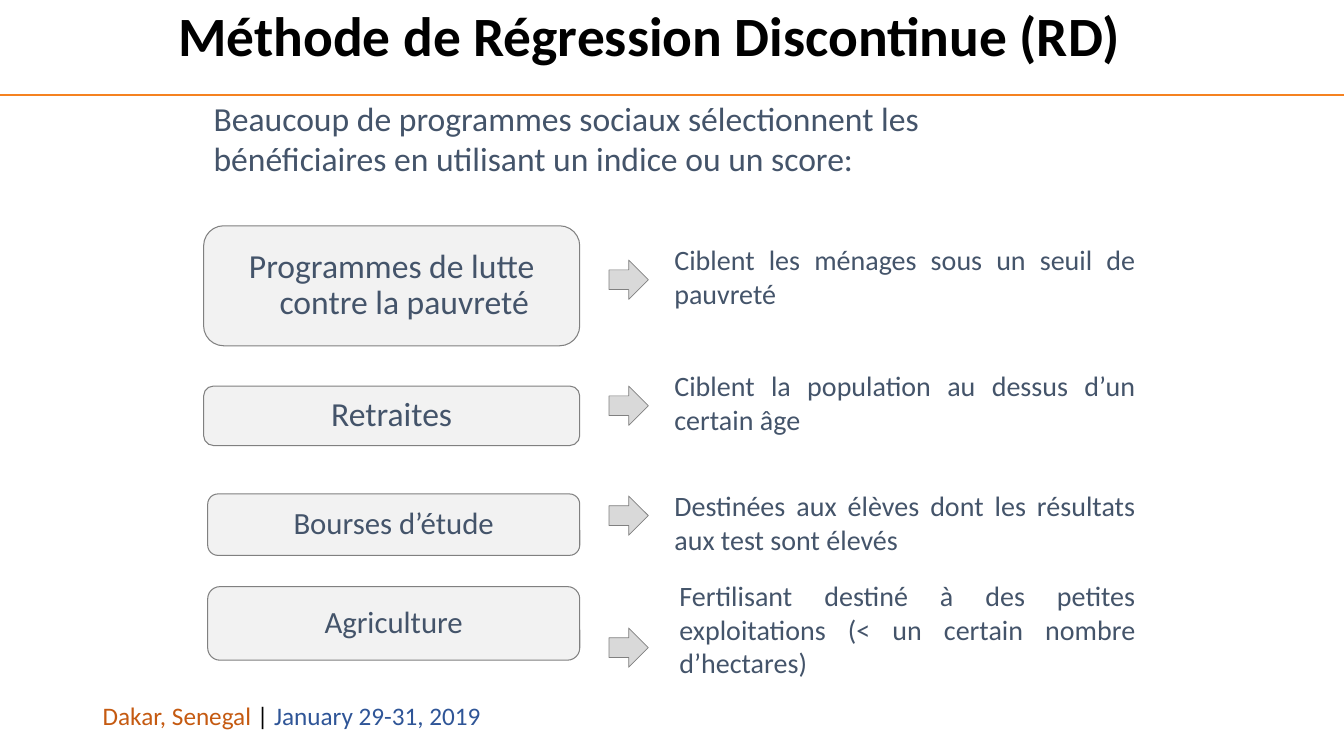
"""Build the slide on the regression discontinuity method."""
from dataclasses import dataclass

from lxml import etree
from pptx import Presentation
from pptx.dml.color import RGBColor
from pptx.enum.shapes import MSO_CONNECTOR, MSO_SHAPE
from pptx.enum.text import MSO_ANCHOR, MSO_AUTO_SIZE, PP_ALIGN
from pptx.oxml.ns import qn
from pptx.util import Inches, Pt

ROUNDED, ARROW = MSO_SHAPE.ROUNDED_RECTANGLE, MSO_SHAPE.RIGHT_ARROW
STRAIGHT = MSO_CONNECTOR.STRAIGHT
LEFT, CENTER, JUSTIFY = PP_ALIGN.LEFT, PP_ALIGN.CENTER, PP_ALIGN.JUSTIFY
TOP, MIDDLE = MSO_ANCHOR.TOP, MSO_ANCHOR.MIDDLE
NO_AUTOFIT = MSO_AUTO_SIZE.NONE

FONT = "Calibri"
SLATE, BLACK, GREY = "44546A", "000000", "808080"
PROGRAM_RIGHT, CRITERION_RIGHT = 5.75, 11.36
ARROW_LEFT, ARROW_SIZE = 6.04, 0.39


@dataclass
class Program:
    """A social programme and the criterion that selects its beneficiaries."""
    name: str
    size: int
    left: float
    top: float
    height: float
    arrow_top: float
    criterion: str
    criterion_left: float
    criterion_top: float
    criterion_height: float


PROGRAMS = [
    Program("Programmes de lutte contre la pauvreté", 24, 2.02, 2.24, 1.19, 2.58,
            "Ciblent les ménages sous un seuil de pauvreté", 6.59, 2.36, 0.77),
    Program("Retraites", 24, 2.02, 3.83, 0.59, 3.83,
            "Ciblent la population au dessus d’un certain âge", 6.59, 3.61, 0.77),
    Program("Bourses d’étude", 22, 2.06, 4.9, 0.61, 4.92,
            "Destinées aux élèves dont les résultats aux test sont élevés",
            6.59, 4.8, 0.77),
    Program("Agriculture", 22, 2.06, 5.82, 0.73, 6.23,
            "Fertilisant destiné à des petites exploitations "
            "(< un certain nombre d’hectares)", 6.64, 5.69, 1.11),
]


def rgb(code: str) -> RGBColor:
    """Turn a hex string into a colour."""
    return RGBColor.from_string(code)


def write(shape, *runs: tuple[str, str], size: float, bold: bool = False,
          align=LEFT, anchor=TOP, wrap: bool = True, spacing: float = 1.0,
          hanging: float = 0) -> None:
    """Write (text, colour) runs as the one paragraph of a shape."""
    frame = shape.text_frame
    frame.auto_size = NO_AUTOFIT
    frame.word_wrap = wrap
    frame.vertical_anchor = anchor
    paragraph = frame.paragraphs[0]
    paragraph.alignment = align
    paragraph.line_spacing = spacing
    if hanging:
        properties = paragraph._p.get_or_add_pPr()
        properties.set("marL", str(Inches(hanging)))
        properties.set("indent", str(-Inches(hanging)))
    for text, color in runs:
        run = paragraph.add_run()
        run.text = text
        run.font.name = FONT
        run.font.size = Pt(size)
        run.font.bold = bold
        run.font.color.rgb = rgb(color)


def add_text_box(slide, left: float, top: float, width: float, height: float):
    """Add an empty text box, measured in inches."""
    return slide.shapes.add_textbox(
        Inches(left), Inches(top), Inches(width), Inches(height))


def add_block(slide, kind, left: float, top: float, width: float, height: float,
              fill: str, line_width: float):
    """Add a flat preset shape with a grey outline."""
    block = slide.shapes.add_shape(
        kind, Inches(left), Inches(top), Inches(width), Inches(height))
    block.shadow.inherit = False
    block.fill.solid()
    block.fill.fore_color.rgb = rgb(fill)
    block.line.color.rgb = rgb(GREY)
    block.line.width = Pt(line_width)
    return block


def add_program(slide, program: Program) -> None:
    """Draw a programme, its arrow and its selection criterion."""
    label = add_block(slide, ROUNDED, program.left, program.top,
                      PROGRAM_RIGHT - program.left, program.height, "F2F2F2", 0.75)
    write(label, (program.name, SLATE), size=program.size, align=CENTER,
          anchor=MIDDLE, spacing=0.9, hanging=0.25)
    add_block(slide, ARROW, ARROW_LEFT, program.arrow_top,
              ARROW_SIZE, ARROW_SIZE, "D9D9D9", 0.5)
    criterion = add_text_box(slide, program.criterion_left, program.criterion_top,
                             CRITERION_RIGHT - program.criterion_left,
                             program.criterion_height)
    write(criterion, (program.criterion, SLATE), size=20, align=JUSTIFY)


def add_rule(slide) -> None:
    """Draw the orange rule under the title."""
    rule = slide.shapes.add_connector(
        STRAIGHT, Inches(13.33), Inches(0.94), Inches(0), Inches(0.94))
    rule.line.color.rgb = rgb("F58220")
    rule.line.width = Pt(1.5)
    etree.SubElement(rule._element.spPr, qn("a:effectLst"))


def main() -> None:
    """Build and save the slide."""
    deck = Presentation()
    deck.slide_width, deck.slide_height = Inches(13.33), Inches(7.5)
    slide = deck.slides.add_slide(deck.slide_layouts[5])

    title = slide.shapes.title
    title.left, title.top = Inches(1.67), Inches(0)
    title.width, title.height = Inches(10), Inches(0.77)
    write(title, ("Méthode de Régression Discontinue (RD)", BLACK), size=39.6,
          bold=True, anchor=MIDDLE, spacing=0.9)

    add_rule(slide)
    footer = add_text_box(slide, 0.92, 6.9, 3.99, 0.71)
    write(footer, ("Dakar, Senegal ", "C55A11"), ("| ", BLACK),
          ("January 29-31, 2019", "2F5597"), size=18, wrap=False)
    intro = add_text_box(slide, 2.02, 0.92, 8.68, 0.91)
    write(intro, ("Beaucoup de programmes sociaux sélectionnent les "
                  "bénéficiaires en utilisant un indice ou un score:", SLATE), size=24)
    for program in PROGRAMS:
        add_program(slide, program)

    deck.save("out.pptx")


if __name__ == "__main__":
    main()
